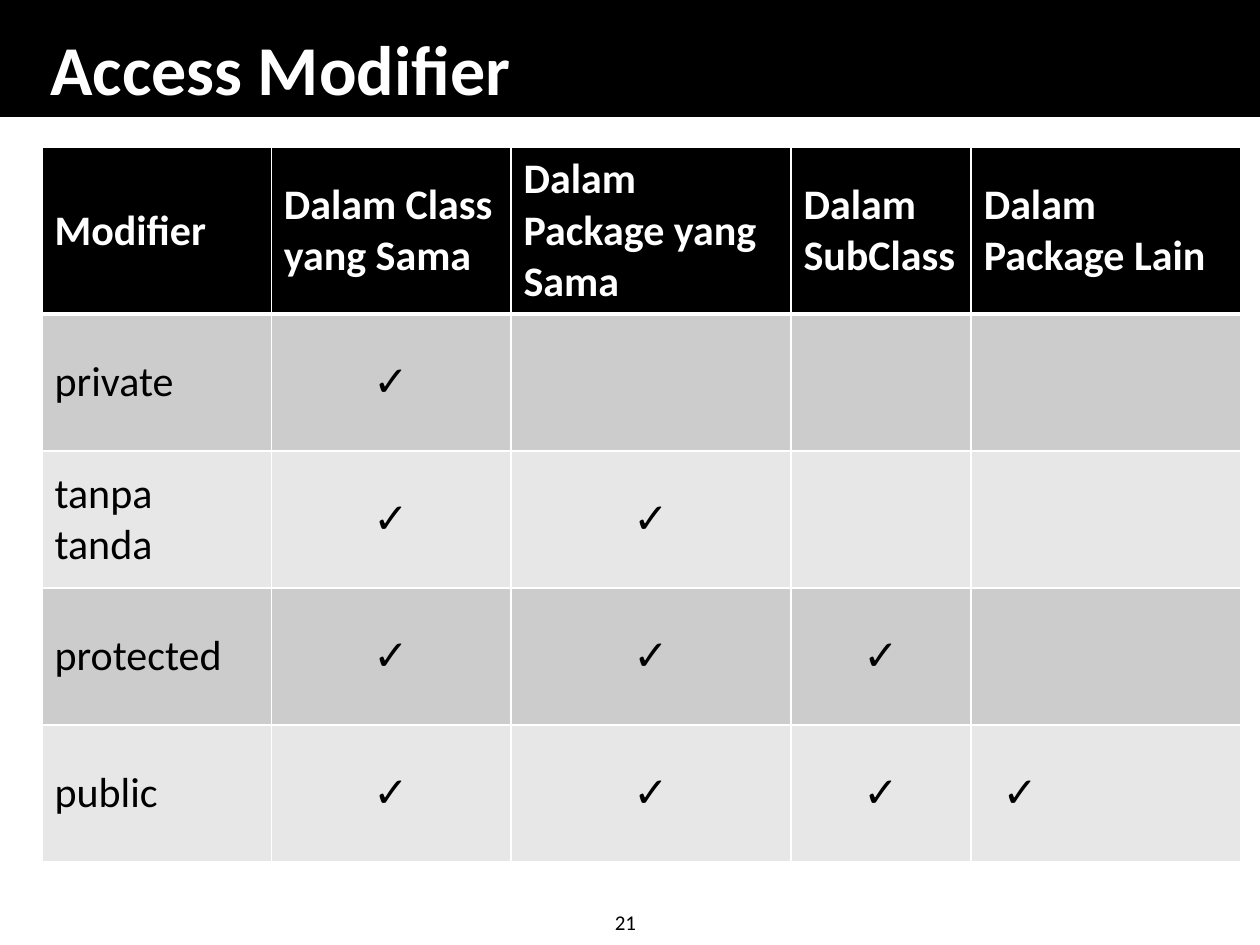
import pptx
import pptx.dml.color
import pptx.enum.shapes
import pptx.enum.text
import pptx.util
from lxml import etree

Pt = pptx.util.Pt
RGB = pptx.dml.color.RGBColor.from_string
Anchor = pptx.enum.text.MSO_ANCHOR
Align = pptx.enum.text.PP_ALIGN
COLORS = {"black": "000000", "white": "FFFFFF", "dark": "CCCCCC", "light": "E7E7E7"}
HEADINGS = ["Modifier", "Dalam Class yang Sama", "Dalam Package yang Sama",
            "Dalam SubClass", "Dalam Package Lain"]
ACCESS = {"private": 1, "tanpa tanda": 2, "protected": 3, "public": 4}
COLUMN_WIDTHS = [131, 137, 160, 103, 154]
HEADER_HEIGHT, ROW_HEIGHT = 95, 78.3
A = "http://schemas.openxmlformats.org/drawingml/2006/main"


def style_text(frame, size, color, bold=False):
    formats = {"name": "Calibri", "size": Pt(size), "bold": bold}
    for paragraph in frame.paragraphs:
        for attribute, value in formats.items():
            setattr(paragraph.font, attribute, value)
        paragraph.font.color.rgb = RGB(COLORS[color])


def add_border(cell, side, width):
    line = etree.SubElement(cell._tc.get_or_add_tcPr(), f"{{{A}}}ln{side}", w=str(Pt(width)))
    fill = etree.SubElement(line, f"{{{A}}}solidFill")
    etree.SubElement(fill, f"{{{A}}}srgbClr", val=COLORS["white"])


deck = pptx.Presentation()
deck.slide_width, deck.slide_height = Pt(720), Pt(540)
slide = deck.slides.add_slide(deck.slide_layouts[5])

band = slide.shapes.add_shape(pptx.enum.shapes.MSO_SHAPE.RECTANGLE, 0, 0, Pt(720), Pt(66.2))
band.shadow.inherit = False
band.fill.solid()
band.fill.fore_color.rgb = RGB(COLORS["black"])
band.line.color.rgb = RGB(COLORS["black"])
band.line.width = Pt(1)

title = slide.shapes.title
title.element.addprevious(band.element)
title.left, title.top, title.width, title.height = Pt(21.6), Pt(15), Pt(674), Pt(51.2)
title.text_frame.text = "Access Modifier"
title.text_frame.auto_size = pptx.enum.text.MSO_AUTO_SIZE.NONE
title.text_frame.vertical_anchor = Anchor.BOTTOM
title.text_frame.paragraphs[0].alignment = Align.LEFT
style_text(title.text_frame, 40, "white", True)

page_number = slide.shapes.add_textbox(Pt(344.2), Pt(516.2), Pt(29.5), Pt(21.6)).text_frame
page_number.text = "21"
page_number.word_wrap = False
style_text(page_number, 12, "black")

rows = [HEADINGS]
for modifier, count in ACCESS.items():
    rows.append([modifier] + ["✓"] * count + [""] * (4 - count))

access_table = slide.shapes.add_table(
    len(rows), len(HEADINGS), Pt(24), Pt(84.4), Pt(sum(COLUMN_WIDTHS)),
    Pt(HEADER_HEIGHT + ROW_HEIGHT * len(ACCESS))).table
for column, width in zip(access_table.columns, COLUMN_WIDTHS):
    column.width = Pt(width)

for row_index, values in enumerate(rows):
    is_header = row_index == 0
    access_table.rows[row_index].height = Pt(HEADER_HEIGHT if is_header else ROW_HEIGHT)
    shade = "black" if is_header else "dark" if row_index % 2 else "light"
    borders = {"L": 1, "R": 1, "T": 3 if row_index == 1 else 1, "B": 3 if is_header else 1}
    for column_index, value in enumerate(values):
        cell = access_table.cell(row_index, column_index)
        for side, width in borders.items():
            add_border(cell, side, width)
        cell.fill.solid()
        cell.fill.fore_color.rgb = RGB(COLORS[shade])
        cell.vertical_anchor = Anchor.MIDDLE
        cell.text = value
        if value == "✓" and column_index < 4:
            cell.text_frame.paragraphs[0].alignment = Align.CENTER
        elif value == "✓":
            cell.margin_left = Pt(18)
        style_text(cell.text_frame, 24, "white" if is_header else "black", is_header)

deck.save("out.pptx")
